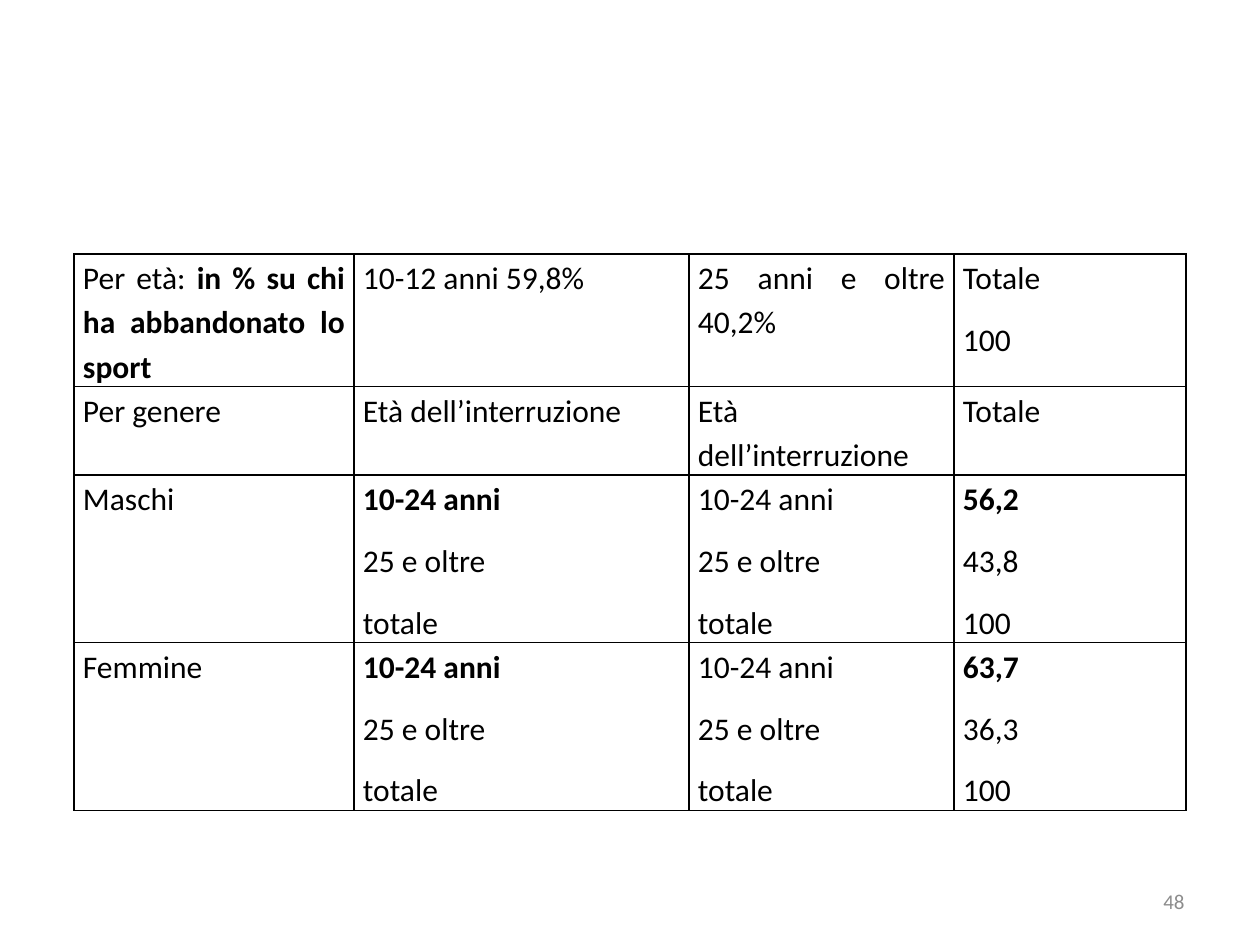
from lxml.etree import SubElement
from pptx import Presentation
from pptx.dml.color import RGBColor
from pptx.enum.text import MSO_ANCHOR as Anchor, PP_ALIGN as Align
from pptx.oxml.ns import qn
from pptx.util import Emu, Pt

# Content: each cell is a list of paragraphs, ** switches bold on and off
AGES = ["10-24 anni", "25 e oltre", "totale"]
BOLD_AGES = ["**10-24 anni**", *AGES[1:]]
INTERRUPTION = ["Età dell’interruzione"]
ROWS = [
    [["Per età: **in % su chi ha abbandonato lo sport**"],
     ["10-12 anni 59,8%"], ["25 anni e oltre 40,2%"], ["Totale", "100"]],
    [["Per genere"], INTERRUPTION, INTERRUPTION, ["Totale"]],
    [["Maschi"], BOLD_AGES, AGES, ["**56,2**", "43,8", "100"]],
    [["Femmine"], BOLD_AGES, AGES, ["**63,7**", "36,3", "100"]],
]
PAGE_NUMBER = "48"

# Layout in px, 126 to the inch
COLUMN_WIDTHS = [280, 335, 265, 232]
ROW_HEIGHTS = [108, 82, 117, 117]
TABLE_LEFT, TABLE_TOP = 74, 254
CELL_MARGIN = 9


def px(value):
    return Emu(round(value * 914400 / 126))


def color(value):
    return RGBColor.from_string(value)


def write(frame, paragraphs, size, fill, align, line_spacing=None, space_after=None):
    for index, text in enumerate(paragraphs):
        paragraph = frame.paragraphs[0] if index == 0 else frame.add_paragraph()
        paragraph.alignment = align
        paragraph.line_spacing = line_spacing
        paragraph.space_after = space_after
        for part, words in enumerate(text.split("**")):
            if words:
                run = paragraph.add_run()
                run.text = words
                run.font.name = "Calibri"
                run.font.size = Pt(size)
                run.font.bold = part % 2 == 1
                run.font.color.rgb = color(fill)


def add_borders(cell, line_color, width):
    properties = cell._tc.get_or_add_tcPr()
    for position, side in enumerate(("lnL", "lnR", "lnT", "lnB")):
        line = properties.makeelement(qn(f"a:{side}"), {"w": str(Pt(width))})
        properties.insert(position, line)
        solid = SubElement(line, qn("a:solidFill"))
        SubElement(solid, qn("a:srgbClr"), val=line_color)


presentation = Presentation()
presentation.slide_width, presentation.slide_height = px(1260), px(945)
slide = presentation.slides.add_slide(presentation.slide_layouts[6])

# Table
table = slide.shapes.add_table(
    len(ROWS), len(COLUMN_WIDTHS), px(TABLE_LEFT), px(TABLE_TOP),
    px(sum(COLUMN_WIDTHS)), px(sum(ROW_HEIGHTS))).table
table.first_row = table.horz_banding = False
for column, width in zip(table.columns, COLUMN_WIDTHS):
    column.width = px(width)
for row, height, contents in zip(table.rows, ROW_HEIGHTS, ROWS):
    row.height = px(height)
    for cell, paragraphs in zip(row.cells, contents):
        cell.margin_left = cell.margin_right = px(CELL_MARGIN)
        cell.margin_top = cell.margin_bottom = 0
        cell.fill.background()
        add_borders(cell, "000000", 1)
        write(cell.text_frame, paragraphs, size=18, fill="000000",
              align=Align.JUSTIFY, line_spacing=1.15, space_after=Pt(10))

# Page number
number_box = slide.shapes.add_textbox(px(903), px(876), px(294), px(50))
number_frame = number_box.text_frame
number_frame.word_wrap = True
number_frame.vertical_anchor = Anchor.MIDDLE
write(number_frame, [PAGE_NUMBER], size=12, fill="8C8C8C", align=Align.RIGHT)

presentation.save("out.pptx")
